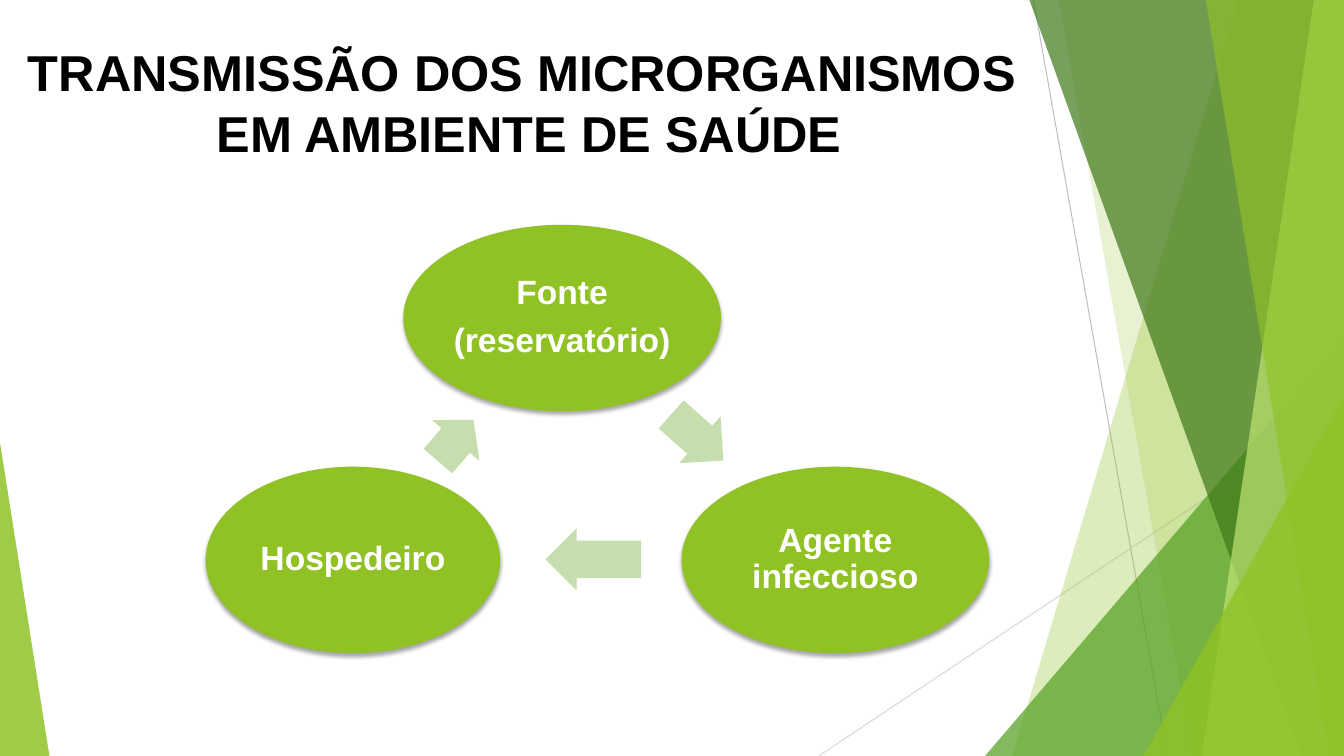
from lxml.etree import SubElement
from pptx import Presentation
from pptx.dml.color import RGBColor
from pptx.enum.shapes import MSO_CONNECTOR, MSO_SHAPE
from pptx.enum.text import MSO_ANCHOR, PP_ALIGN
from pptx.oxml.ns import qn
from pptx.util import Inches, Pt

COLORS = {
    "lime": "90C226", "pale_lime": "C0E474", "green": "54A021",
    "forest": "3F7819", "arrow": "C6DDAD", "white": "FFFFFF",
    "black": "000000", "line": "BFBFBF", "pale_line": "D9D9D9",
}
WIDTH, HEIGHT = 13.33, 7.5


def color(name):
    return RGBColor.from_string(COLORS[name])


def paint(shape, name, opacity=100):
    shape.shadow.inherit = False
    shape.fill.solid()
    shape.fill.fore_color.rgb = color(name)
    shape.line.fill.background()
    if opacity < 100:
        tint = shape._element.spPr.find(qn("a:solidFill"))[0]
        SubElement(tint, qn("a:alpha"), val=str(opacity * 1000))


def add_preset(page, kind, box, name, opacity=100):
    shape = page.shapes.add_shape(kind, *map(Inches, box))
    paint(shape, name, opacity)
    return shape


def add_thin_line(page, start, end, name):
    line = page.shapes.add_connector(
        MSO_CONNECTOR.STRAIGHT, *map(Inches, start + end))
    line.line.color.rgb = color(name)
    line.line.width = Pt(0.75)
    SubElement(line._element.spPr, qn("a:effectLst"))


def add_band(page, box, top_x, bottom_x, name, opacity):
    left, top, width, height = box
    right, bottom = left + width, top + height
    points = [(top_x, top), (right, top), (right, bottom), (bottom_x, bottom)]
    corners = [(Inches(x), Inches(y)) for x, y in points]
    builder = page.shapes.build_freeform(*corners[0])
    builder.add_line_segments(corners[1:], close=True)
    paint(builder.convert_to_shape(), name, opacity)


def add_corner(page, box, apex, name, opacity):
    corner = add_preset(page, MSO_SHAPE.ISOSCELES_TRIANGLE, box, name, opacity)
    corner.adjustments[0] = apex


def add_backdrop(page, box):
    left, top, width, height = box
    right, bottom = left + width, top + height
    add_thin_line(page, (10.25, top), (11.58, bottom), "line")
    add_thin_line(page, (right, 4.03), (8.12, bottom), "pale_line")

    def band(*details):
        add_band(page, box, *details)

    def corner(corner_width, corner_height, name, opacity):
        add_corner(page, (right - corner_width, bottom - corner_height,
                          corner_width, corner_height), 1, name, opacity)

    band(12.28, 10.04, "lime", 30)
    band(10.5, 11.83, "lime", 20)
    corner(3.56, 4.17, "green", 72)
    band(10.21, 12.91, "forest", 70)
    band(13.03, 11.92, "pale_lime", 70)
    band(11.96, 13.18, "lime", 65)
    corner(1.99, 3.57, "lime", 80)
    add_corner(page, (0, 4.39, 0.49, 3.11), 0, "lime", 85)


def style_paragraph(para, size, name):
    para.alignment = PP_ALIGN.CENTER
    para.font.name = "Arial"
    para.font.size = Pt(size)
    para.font.bold = True
    para.font.color.rgb = color(name)


def add_title(page, box):
    frame = page.shapes.add_textbox(*map(Inches, box)).text_frame
    frame.word_wrap = True
    para = frame.paragraphs[0]
    para.text = "TRANSMISSÃO DOS MICRORGANISMOS \vEM AMBIENTE DE SAÚDE"
    style_paragraph(para, 36, "black")


def add_soft_shadow(shape):
    effects = shape._element.spPr.find(qn("a:effectLst"))
    shadow = SubElement(effects, qn("a:outerShdw"), blurRad=str(Pt(3)),
                        dist=str(Pt(2)), dir="5400000", rotWithShape="0")
    tint = SubElement(shadow, qn("a:srgbClr"), val=COLORS["black"])
    SubElement(tint, qn("a:alpha"), val="35000")


def add_stage(page, box, text):
    stage = add_preset(page, MSO_SHAPE.OVAL, box, "lime")
    add_soft_shadow(stage)
    frame = stage.text_frame
    frame.word_wrap = True
    frame.vertical_anchor = MSO_ANCHOR.MIDDLE
    frame.margin_left = frame.margin_right = Inches(0.03)
    frame.margin_top = frame.margin_bottom = Inches(0.03)
    frame.text = text
    for para in frame.paragraphs:
        style_paragraph(para, 24, "white")
        para.line_spacing = 0.9
        para.space_after = Pt(8.4)


def add_cycle(page, box):
    left, top, width, height = box
    stage_height, arrow_height = 1.85, 0.62
    lower = height - stage_height
    stages = [
        (1.96, 0, 3.15, "Fonte\n(reservatório)"),
        (width - 3.05, lower, 3.05, "Agente infeccioso"),
        (0, lower, 2.92, "Hospedeiro"),
    ]
    arrows = [(4.53, 1.8, 0.69, 41.5), (3.37, 3.01, 0.95, 180),
              (2.21, 1.83, 0.54, 310.8)]
    for stage, arrow in zip(stages, arrows):
        x, y, stage_width, text = stage
        add_stage(page, (left + x, top + y, stage_width, stage_height), text)
        x, y, arrow_width, angle = arrow
        pointer = add_preset(page, MSO_SHAPE.RIGHT_ARROW,
                             (left + x, top + y, arrow_width, arrow_height), "arrow")
        pointer.adjustments[0] = 0.6
        pointer.adjustments[1] = 0.5
        pointer.rotation = angle


def main():
    deck = Presentation()
    deck.slide_width, deck.slide_height = Inches(WIDTH), Inches(HEIGHT)
    page = deck.slides.add_slide(deck.slide_layouts[6])
    add_backdrop(page, (0, 0, WIDTH, HEIGHT))
    add_title(page, (0, 0.36, 10.5, 1.7))
    add_cycle(page, (2.04, 2.23, 7.77, 4.25))
    deck.save("out.pptx")


if __name__ == "__main__":
    main()
